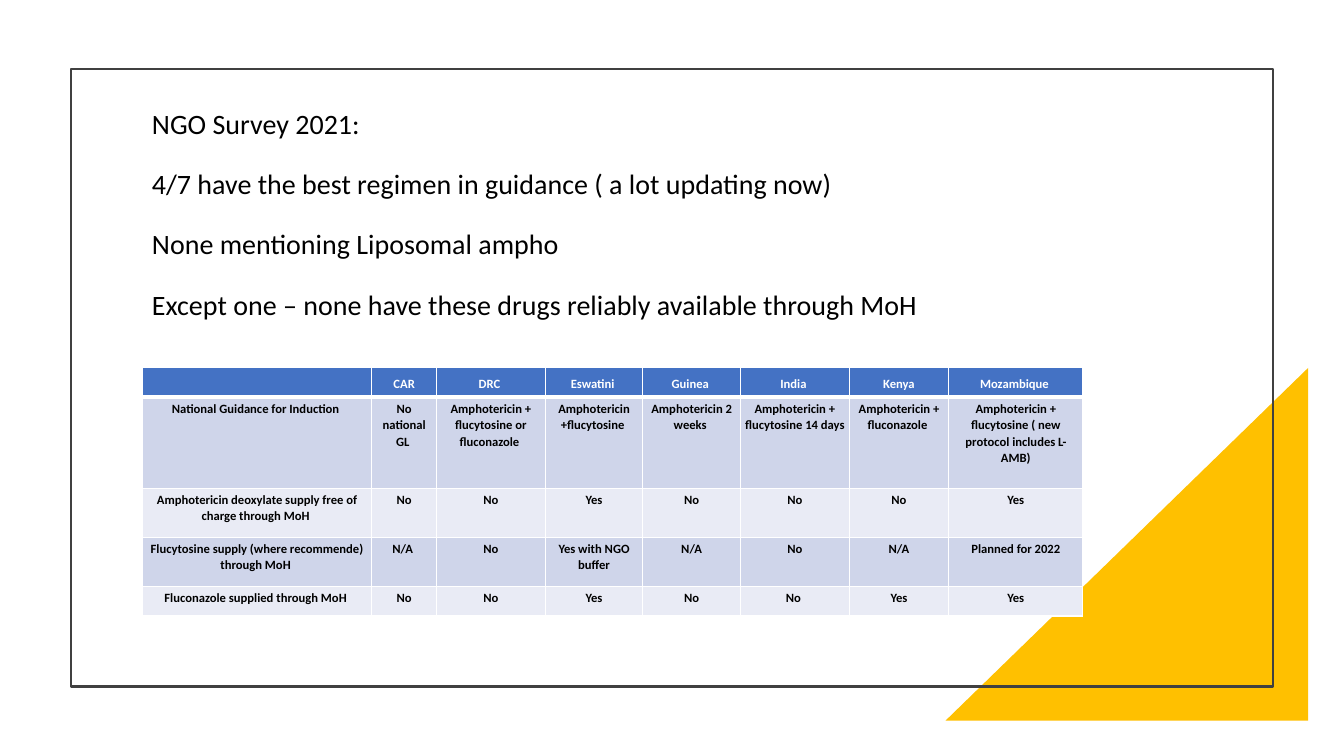
"""Build a slide on cryptococcal drug guidance and supply in seven countries."""
from typing import NamedTuple

from lxml import etree
from pptx import Presentation
from pptx.dml.color import RGBColor
from pptx.enum.shapes import MSO_SHAPE
from pptx.enum.text import MSO_ANCHOR, PP_ALIGN
from pptx.oxml.ns import qn
from pptx.util import Cm, Pt

RECT = MSO_SHAPE.RECTANGLE
CORNER = MSO_SHAPE.RIGHT_TRIANGLE
MIDDLE = MSO_ANCHOR.MIDDLE
TOP = MSO_ANCHOR.TOP
CENTER = PP_ALIGN.CENTER
FONT = "Calibri"
BLACK, WHITE, BLUE = "000000", "FFFFFF", "4472C4"
BANDS = ("CFD5EA", "E9EBF5")


class Box(NamedTuple):
    left: float
    top: float
    width: float
    height: float


class Row(NamedTuple):
    height: float
    texts: tuple[str, ...]


TITLE = (
    "NGO Survey 2021:",
    "4/7 have the best regimen in guidance ( a lot updating now)",
    "None mentioning Liposomal ampho",
    "Except one – none have these drugs reliably available through MoH",
)
WIDTHS = (5.79, 1.63, 2.74, 2.46, 2.46, 2.74, 2.51, 3.38)
ROWS = (
    Row(0.74, ("", "CAR", "DRC ", "Eswatini ", "Guinea ", "India ", "Kenya", "Mozambique ")),
    Row(2.29, (
        "National Guidance for Induction ",
        "No national GL ",
        "Amphotericin + flucytosine or fluconazole ",
        "Amphotericin +flucytosine ",
        "Amphotericin 2 weeks ",
        "Amphotericin + flucytosine 14 days",
        "Amphotericin + fluconazole ",
        "Amphotericin + flucytosine ( new protocol includes L-AMB)",
    )),
    Row(1.24, ("Amphotericin deoxylate supply free of charge through MoH ",
               "No", "No", "Yes", "No", "No", "No", "Yes")),
    Row(1.24, ("Flucytosine supply (where recommende) through MoH ",
               "N/A ", "No", "Yes with NGO buffer", "N/A", "No", "N/A", "Planned for 2022")),
    Row(0.74, ("Fluconazole supplied through MoH ",
               "No", "No", "Yes", "No", "No ", "Yes", "Yes")),
)


def color(code: str) -> RGBColor:
    return RGBColor.from_string(code)


def place(box: Box) -> tuple[Cm, ...]:
    return tuple(Cm(size) for size in box)


def add_corner(slide, box: Box) -> None:
    shape = slide.shapes.add_shape(CORNER, *place(box))
    shape.shadow.inherit = False
    shape.fill.solid()
    shape.fill.fore_color.rgb = color("FFC000")
    shape.line.fill.background()
    shape._element.spPr.find(qn("a:xfrm")).set("flipH", "1")


def add_frame(slide, box: Box) -> None:
    shape = slide.shapes.add_shape(RECT, *place(box))
    shape.shadow.inherit = False
    shape.fill.background()
    shape.line.color.rgb = color("404040")
    shape.line.width = Pt(1.5)


def add_title(slide, box: Box) -> None:
    frame = slide.shapes.add_textbox(*place(box)).text_frame
    frame.word_wrap = True
    frame.vertical_anchor = MIDDLE
    frame.text = "\n".join(TITLE)
    for index, para in enumerate(frame.paragraphs):
        para.line_spacing = 0.9
        para.space_before = Pt(21.6 if index else 0)
        para.font.name = FONT
        para.font.size = Pt(20)
        para.font.color.rgb = color(BLACK)


def add_edges(cell, base: float) -> None:
    props = cell._tc.get_or_add_tcPr()
    for side, width in (("L", 1), ("R", 1), ("T", 1), ("B", base)):
        line = etree.SubElement(props, qn(f"a:ln{side}"), w=str(Pt(width)))
        fill = etree.SubElement(line, qn("a:solidFill"))
        etree.SubElement(fill, qn("a:srgbClr"), val=WHITE)


def fill_cell(cell, text: str, row: int) -> None:
    head = row == 0
    add_edges(cell, 3 if head else 1)
    cell.fill.solid()
    cell.fill.fore_color.rgb = color(BLUE if head else BANDS[(row - 1) % 2])
    cell.vertical_anchor = MIDDLE if head else TOP
    cell.margin_left = cell.margin_right = cell.margin_top = Cm(0.08)
    cell.margin_bottom = Cm(0.05)
    cell.text = text
    para = cell.text_frame.paragraphs[0]
    para.alignment = CENTER
    para.line_spacing = 1.07
    para.space_after = Pt(8)
    para.font.name = FONT
    para.font.size = Pt(9)
    para.font.bold = True
    para.font.color.rgb = color(WHITE if head else BLACK)


def add_grid(slide, box: Box) -> None:
    table = slide.shapes.add_table(len(ROWS), len(WIDTHS), *place(box)).table
    for column, width in zip(table.columns, WIDTHS):
        column.width = Cm(width)
    for index, row in enumerate(ROWS):
        table.rows[index].height = Cm(row.height)
        for cell, text in zip(table.rows[index].cells, row.texts):
            fill_cell(cell, text, index)


def main() -> None:
    deck = Presentation()
    deck.slide_width, deck.slide_height = Cm(33.87), Cm(19.05)
    slide = deck.slides.add_slide(deck.slide_layouts[6])
    add_corner(slide, Box(23.83, 9.27, 9.14, 8.89))
    add_frame(slide, Box(1.78, 1.73, 30.3, 15.57))
    add_title(slide, Box(3.58, 2.92, 22.94, 5.03))
    add_grid(slide, Box(3.58, 9.27, sum(WIDTHS), sum(row.height for row in ROWS)))
    deck.save("out.pptx")


if __name__ == "__main__":
    main()
